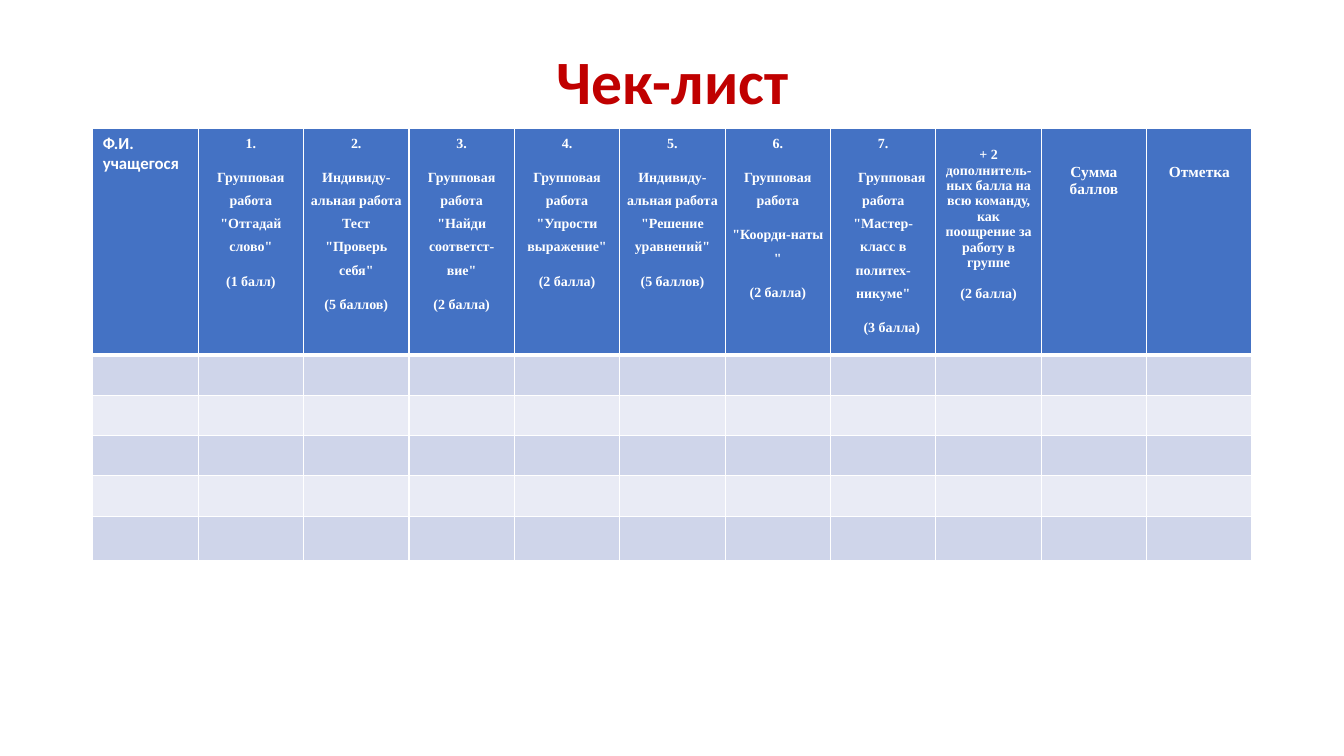
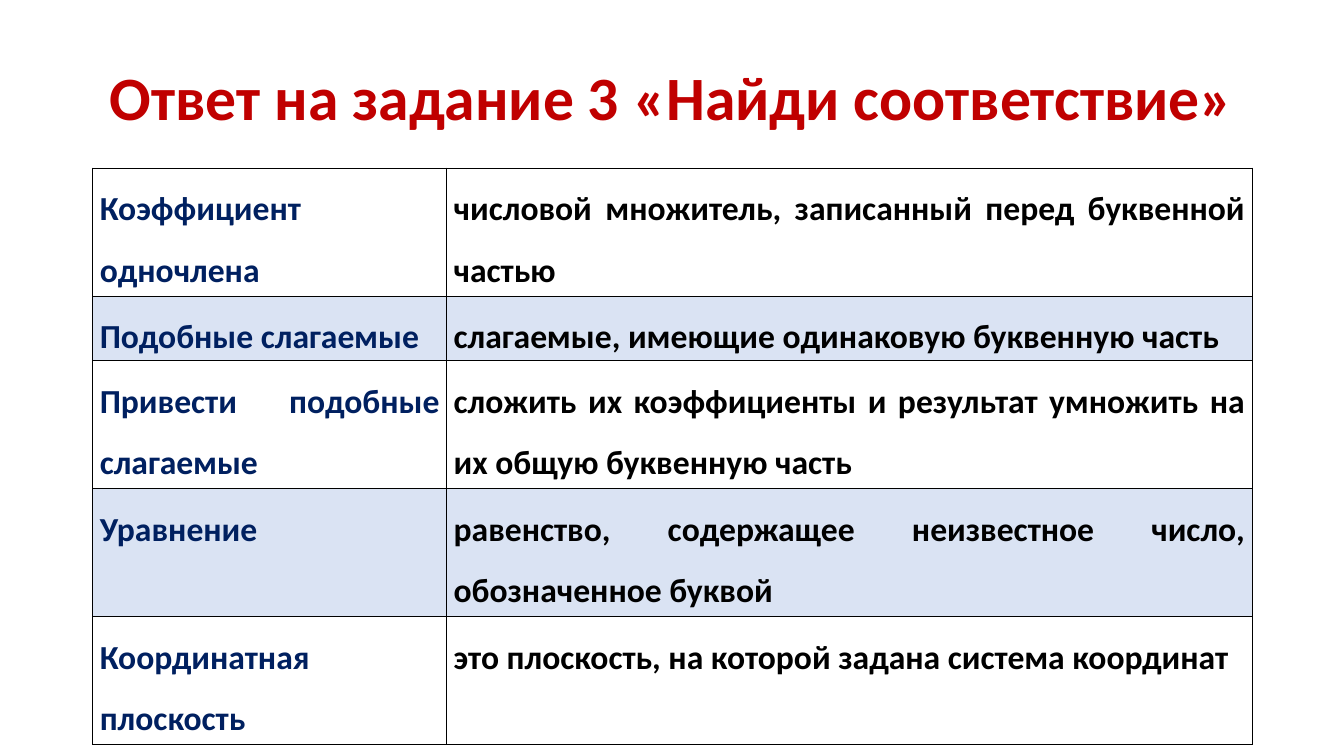
from dataclasses import dataclass

from lxml import etree
from pptx import Presentation
from pptx.dml.color import RGBColor
from pptx.enum import text as t
from pptx.oxml import ns
from pptx.util import Inches, Pt


@dataclass(frozen=True)
class Theme:
    sans: str = "Calibri"
    serif: str = "Times New Roman"
    title_red: str = "C00000"
    header_blue: str = "4472C4"
    band_dark: str = "CFD5EA"
    band_light: str = "E9EBF5"
    band_answer: str = "DAE3F3"
    term_navy: str = "002060"
    white: str = "FFFFFF"
    black: str = "000000"
    title_size: float = 44
    answer_size: float = 24
    name_size: float = 12
    total_size: float = 11
    task_size: float = 10


THEME = Theme()
LEFT, WIDTH = 0.92, 11.5
TIGHT = dict(margin_left=Inches(0.07), margin_right=Inches(0.07),
             margin_top=0, margin_bottom=0)
CENTER = dict(alignment=t.PP_ALIGN.CENTER)
TASK_FORMAT = dict(CENTER, line_spacing=1.5, space_after=Pt(8))
ANSWER_FORMAT = dict(alignment=t.PP_ALIGN.JUSTIFY, line_spacing=1.5)

TASKS = [
    ("Групповая работа \"Отгадай слово\"", "(1 балл)"),
    ("Индивиду-альная работа Тест \"Проверь себя\"", "(5 баллов)"),
    ("Групповая работа \"Найди соответст-вие\"", "(2 балла)"),
    ("Групповая работа \"Упрости выражение\"", "(2 балла)"),
    ("Индивиду-альная работа \"Решение уравнений\"", "(5 баллов)"),
    ("Групповая работа", "\"Коорди-наты \"", "(2 балла)"),
    ("Групповая работа \"Мастер-класс в политех- никуме\"", "(3 балла)"),
]
BONUS = ("+ 2 дополнитель-ных балла на всю команду, как поощрение за работу в группе",
         "(2 балла)")
TOTALS = ["Сумма баллов", "Отметка"]
ANSWERS = [
    ("Коэффициент одночлена", "числовой множитель, записанный перед буквенной частью"),
    ("Подобные слагаемые", "слагаемые, имеющие одинаковую буквенную часть"),
    ("Привести подобные слагаемые",
     "сложить их коэффициенты и результат умножить на их общую буквенную часть"),
    ("Уравнение", "равенство, содержащее неизвестное число, обозначенное буквой"),
    ("Координатная плоскость", "это плоскость, на которой задана система координат"),
]


def apply(target, settings):
    for name, value in settings.items():
        setattr(target, name, value)


def write(frame, lines, size, color, font=THEME.sans, **paragraph_format):
    """Fill a text frame with bold lines, one paragraph each, and return them."""
    frame.text = "\n".join(lines)
    for paragraph in frame.paragraphs:
        apply(paragraph, paragraph_format)
        for run in paragraph.runs:
            apply(run.font, dict(name=font, size=Pt(size), bold=True))
            run.font.color.rgb = RGBColor.from_string(color)
    return frame.paragraphs


def add_title(slide, wording, top, height):
    frame = slide.shapes.add_textbox(Inches(LEFT), Inches(top),
                                     Inches(WIDTH), Inches(height)).text_frame
    apply(frame, dict(word_wrap=True, vertical_anchor=t.MSO_ANCHOR.MIDDLE))
    write(frame, [wording], THEME.title_size, THEME.title_red,
          line_spacing=0.9, **CENTER)


def add_grid(slide, top, column_widths, row_heights):
    table = slide.shapes.add_table(
        len(row_heights), len(column_widths), Inches(LEFT), Inches(top),
        Inches(WIDTH), Inches(sum(row_heights))).table
    apply(table, dict(first_row=False, horz_banding=False))
    for column, width in zip(table.columns, column_widths):
        column.width = Inches(width)
    for row, height in zip(table.rows, row_heights):
        row.height = Inches(height)
    return table


def paint(cell, fill, border, top=1, bottom=1):
    """Set the fill (None for no fill) and the border widths in points."""
    if fill:
        cell.fill.solid()
        cell.fill.fore_color.rgb = RGBColor.from_string(fill)
    else:
        cell.fill.background()
    properties = cell._tc.get_or_add_tcPr()
    sides = dict(lnL=1, lnR=1, lnT=top, lnB=bottom)
    for position, (side, width) in enumerate(sides.items()):
        line = etree.Element(ns.qn(f"a:{side}"), w=str(Pt(width)))
        solid = etree.SubElement(line, ns.qn("a:solidFill"))
        etree.SubElement(solid, ns.qn("a:srgbClr"), val=border)
        properties.insert(position, line)


def indent_first_line(paragraph, inches):
    paragraph._p.get_or_add_pPr().set("indent", str(Inches(inches)))


def fill_header(cells):
    name_cell, *task_cells = cells[:len(TASKS) + 1]
    bonus_cell, *total_cells = cells[len(TASKS) + 1:]
    write(name_cell.text_frame, ["Ф.И.", "учащегося"], THEME.name_size, THEME.white)

    for number, (cell, task) in enumerate(zip(task_cells, TASKS), 1):
        apply(cell, TIGHT)
        paragraphs = write(cell.text_frame, [f"{number}.", *task], THEME.task_size,
                           THEME.white, THEME.serif, **TASK_FORMAT)
    for paragraph in paragraphs[1:]:
        indent_first_line(paragraph, 0.17)

    apply(bonus_cell, dict(TIGHT, margin_top=Inches(0.19)))
    _, score = write(bonus_cell.text_frame, BONUS, THEME.task_size,
                     THEME.white, THEME.serif, **CENTER)
    score.space_before = Pt(11)

    for cell, label in zip(total_cells, TOTALS):
        cell.margin_top = Inches(0.35)
        write(cell.text_frame, [label], THEME.total_size,
              THEME.white, THEME.serif, **CENTER)


def build_checklist(slide):
    add_title(slide, "Чек-лист", 0.23, 1.22)
    column_count = 1 + len(TASKS) + 1 + len(TOTALS)
    table = add_grid(slide, 1.27, [WIDTH / column_count] * column_count,
                     [2.25] + [0.39] * 4 + [0.44])
    header, *pupils = table.rows
    fill_header(list(header.cells))
    for cell in header.cells:
        paint(cell, THEME.header_blue, THEME.white, bottom=3)
    for index, pupil in enumerate(pupils):
        band = THEME.band_light if index % 2 else THEME.band_dark
        for cell in pupil.cells:
            paint(cell, band, THEME.white, top=1 if index else 3)


def build_answers(slide):
    add_title(slide, "Ответ на задание 3 «Найди соответствие»", 0.4, 1.19)
    table = add_grid(slide, 1.67, [3.51, 7.99], [1.27, 0.64, 1.27, 1.27, 1.27])
    for index, (row, answer) in enumerate(zip(table.rows, ANSWERS)):
        for cell, wording, color in zip(row.cells, answer,
                                        (THEME.term_navy, THEME.black)):
            apply(cell, TIGHT)
            write(cell.text_frame, [wording], THEME.answer_size, color, **ANSWER_FORMAT)
            paint(cell, THEME.band_answer if index % 2 else None, THEME.black)


def main():
    deck = Presentation()
    apply(deck, dict(slide_width=Inches(13.33), slide_height=Inches(7.5)))
    for build in (build_checklist, build_answers):
        build(deck.slides.add_slide(deck.slide_layouts[6]))
    deck.save("out.pptx")


if __name__ == "__main__":
    main()
